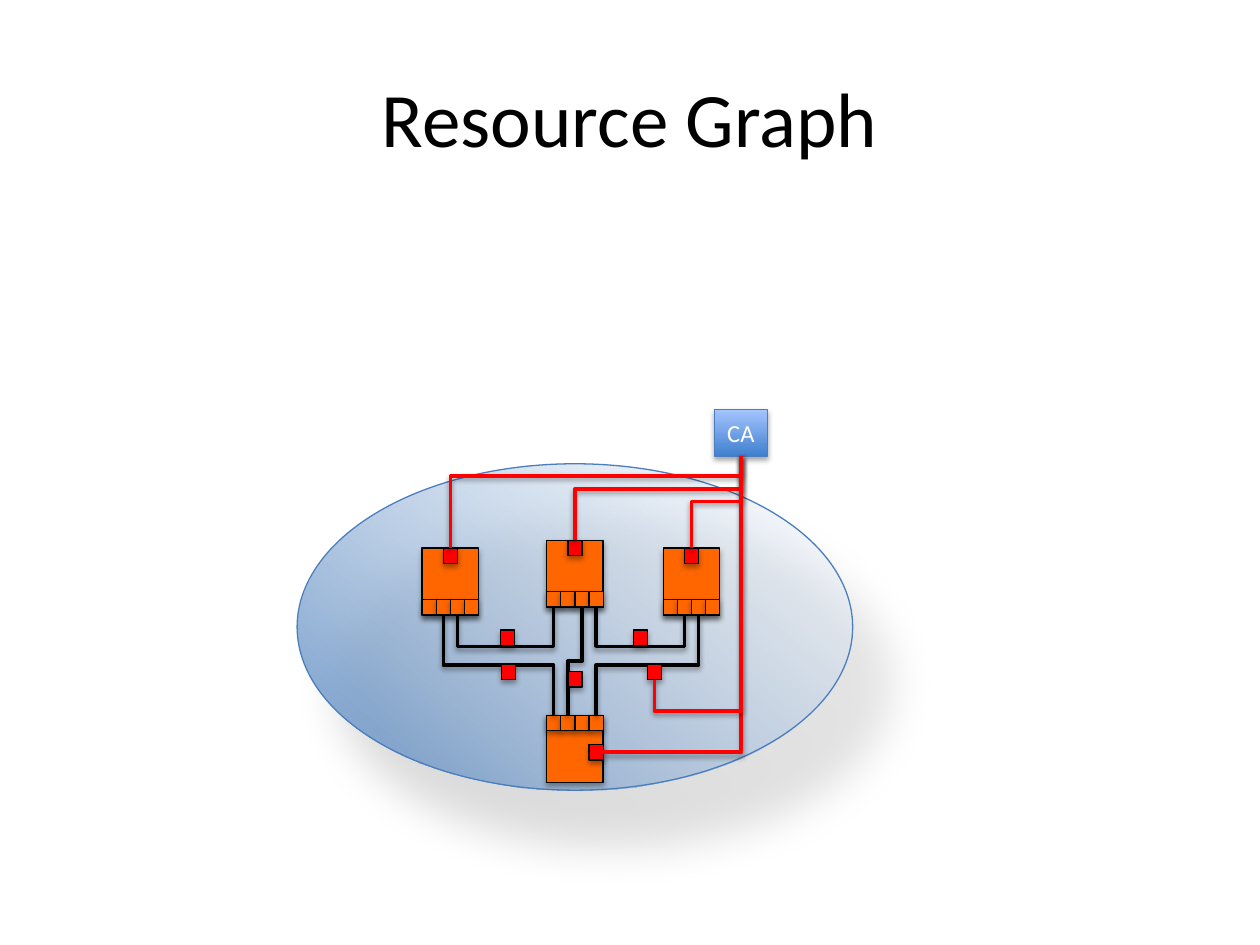
from lxml.etree import SubElement
from pptx import Presentation
from pptx.dml.color import RGBColor
from pptx.enum.shapes import MSO_CONNECTOR, MSO_SHAPE
from pptx.enum.text import MSO_ANCHOR, PP_ALIGN
from pptx.oxml.ns import qn
from pptx.util import Cm, Pt

BLACK = RGBColor(0x00, 0x00, 0x00)
WHITE = RGBColor(0xFF, 0xFF, 0xFF)
RED = RGBColor(0xFF, 0x00, 0x00)
ORANGE = RGBColor(0xFF, 0x66, 0x00)
BLUE = RGBColor(0x4F, 0x81, 0xBD)
OUTLINE_BLUE = RGBColor(0x4B, 0x7E, 0xBC)
DEEP_BLUE = RGBColor(0x3F, 0x80, 0xCE)
LIGHT_BLUE = RGBColor(0xA4, 0xC4, 0xFF)

FONT = "Calibri"
DEVICE_WIDTH, DEVICE_HEIGHT = 1.14, 1.35
PORT_COUNT = 4
PORT_WIDTH, PORT_HEIGHT = DEVICE_WIDTH / PORT_COUNT, 0.31
TOP, BOTTOM, RIGHT = 0, 2, 3

# Shadows: opacity in percent, blur and distance in points, direction in degrees
BOX_SHADOW = (35, 3.1, 1.8, 90)
LINE_SHADOW = (38, 3.1, 1.6, 90)
CLOUD_SHADOW = (18, 25, 39, 55)


class GraphSlide:
    """Style and drawing methods for one slide."""

    def __init__(self, slide):
        self.slide = slide

    def shadow(self, shape, opacity, blur, distance, direction):
        effects = SubElement(shape._element.spPr, qn("a:effectLst"))
        outer = SubElement(effects, qn("a:outerShdw"), blurRad=str(Pt(blur)),
                           dist=str(Pt(distance)), dir=str(direction * 60000),
                           rotWithShape="0")
        color = SubElement(outer, qn("a:srgbClr"), val=str(BLACK))
        SubElement(color, qn("a:alpha"), val=str(opacity * 1000))

    def label(self, shape, text, size, color):
        frame = shape.text_frame
        frame.word_wrap = True
        frame.vertical_anchor = MSO_ANCHOR.MIDDLE
        paragraph = frame.paragraphs[0]
        paragraph.text = text
        paragraph.alignment = PP_ALIGN.CENTER
        paragraph.font.name = FONT
        paragraph.font.size = Pt(size)
        paragraph.font.color.rgb = color

    def title(self, text, left, top, width, height):
        box = self.slide.shapes.add_textbox(Cm(left), Cm(top), Cm(width), Cm(height))
        self.label(box, text, 44, BLACK)

    def box(self, left, top, width, height, color, parent=None):
        shapes = (parent or self.slide).shapes
        shape = shapes.add_shape(MSO_SHAPE.RECTANGLE, Cm(left), Cm(top),
                                 Cm(width), Cm(height))
        shape.fill.solid()
        shape.fill.fore_color.rgb = color
        shape.line.color.rgb = BLACK
        shape.line.width = Pt(0.75)
        self.shadow(shape, *BOX_SHADOW)
        return shape

    def gradient_shape(self, kind, left, top, width, height, stops, angle, shadow):
        """Each stop is a colour and its opacity in percent."""
        shape = self.slide.shapes.add_shape(kind, Cm(left), Cm(top), Cm(width), Cm(height))
        shape.fill.gradient()
        shape.fill.gradient_angle = angle
        for stop, (color, opacity) in zip(shape.fill.gradient_stops, stops):
            stop.color.rgb = color
        for element, (color, opacity) in zip(shape._element.iter(qn("a:srgbClr")), stops):
            if opacity < 100:
                SubElement(element, qn("a:alpha"), val=str(opacity * 1000))
        shape.line.color.rgb = OUTLINE_BLUE
        shape.line.width = Pt(0.75)
        self.shadow(shape, *shadow)
        return shape

    def marker(self, left, top, parent=None):
        return self.box(left, top, PORT_WIDTH, PORT_HEIGHT, RED, parent)

    def device(self, left, top, upside_down=False):
        """Return the ports from left to right, and the control square."""
        group = self.slide.shapes.add_group_shape()
        self.box(left, top, DEVICE_WIDTH, DEVICE_HEIGHT, ORANGE, group)
        port_top = top if upside_down else top + DEVICE_HEIGHT - PORT_HEIGHT
        ports = [self.box(left + i * PORT_WIDTH, port_top, PORT_WIDTH, PORT_HEIGHT,
                          ORANGE, group) for i in range(PORT_COUNT)]
        if upside_down:
            control = self.marker(left + DEVICE_WIDTH - PORT_WIDTH, top + 0.59, group)
        else:
            control = self.marker(left + (DEVICE_WIDTH - PORT_WIDTH) / 2, top, group)
        return ports, control

    def elbow(self, start, start_side, end, end_side, color, bend=None):
        """Join two boxes; bend is the height of the level stretch."""
        connector = self.slide.shapes.add_connector(MSO_CONNECTOR.ELBOW, 0, 0, 0, 0)
        connector.begin_connect(start, start_side)
        connector.end_connect(end, end_side)
        connector.line.color.rgb = color
        connector.line.width = Pt(2)
        self.shadow(connector, *LINE_SHADOW)
        properties = connector._element.spPr
        geometry = properties.find(qn("a:prstGeom"))
        if start_side == RIGHT:
            geometry.set("prst", "bentConnector2")
            return
        # The path leaves vertically: a frame turned by a quarter
        x1, y1 = connector.begin_x, connector.begin_y
        x2, y2 = connector.end_x, connector.end_y
        center_x, center_y = (x1 + x2) // 2, (y1 + y2) // 2
        half_x, half_y = (x2 - x1) // 2, (y2 - y1) // 2
        connector.begin_x, connector.end_x = center_x - half_y, center_x + half_y
        connector.begin_y, connector.end_y = center_y + half_x, center_y - half_x
        properties.find(qn("a:xfrm")).set("rot", str(90 * 60000))
        if bend is not None:
            share = round((Cm(bend) - y1) / (y2 - y1) * 100000)
            SubElement(geometry.find(qn("a:avLst")), qn("a:gd"),
                       name="adj1", fmla=f"val {share}")


def main():
    presentation = Presentation()
    presentation.slide_width, presentation.slide_height = Cm(25.4), Cm(19.05)
    graph = GraphSlide(presentation.slides.add_slide(presentation.slide_layouts[6]))
    graph.title("Resource Graph", 1.27, 0.76, 22.86, 3.18)

    # Network cloud
    graph.gradient_shape(MSO_SHAPE.OVAL, 5.99, 9.35, 11.2, 6.58,
                         [(BLUE, 81), (WHITE, 50)], 50, CLOUD_SHADOW)

    # Devices and controller
    left_ports, left_control = graph.device(8.51, 11.05)
    center_ports, center_control = graph.device(11.02, 10.89)
    bottom_ports, bottom_control = graph.device(11.02, 14.42, upside_down=True)
    right_ports, right_control = graph.device(13.37, 11.05)
    controller = graph.gradient_shape(MSO_SHAPE.RECTANGLE, 14.4, 8.26, 1.07, 0.94,
                                      [(DEEP_BLUE, 100), (LIGHT_BLUE, 100)], 90, BOX_SHADOW)
    graph.label(controller, "CA", 14, WHITE)

    # Data links between ports
    upper_bend = 13.03
    for start, start_side, end, end_side, bend in [
        (left_ports[1], BOTTOM, bottom_ports[0], TOP, None),
        (center_ports[2], BOTTOM, bottom_ports[1], TOP, None),
        (center_ports[3], BOTTOM, right_ports[1], BOTTOM, upper_bend),
        (center_ports[0], BOTTOM, left_ports[2], BOTTOM, upper_bend),
        (bottom_ports[3], TOP, right_ports[2], BOTTOM, None),
    ]:
        graph.elbow(start, start_side, end, end_side, BLACK, bend)

    # Link markers
    controlled_marker = graph.marker(13.05, 13.39)
    for left, top in [(12.77, 12.7), (11.45, 13.54), (10.11, 13.39), (10.09, 12.7)]:
        graph.marker(left, top)

    # Control lines to the controller
    for start, side, bend in [
        (bottom_control, RIGHT, None),
        (right_control, TOP, 10.11),
        (center_control, TOP, 9.86),
        (left_control, TOP, 9.6),
        (controlled_marker, BOTTOM, 14.33),
    ]:
        graph.elbow(start, side, controller, BOTTOM, RED, bend)

    presentation.save("out.pptx")


if __name__ == "__main__":
    main()
